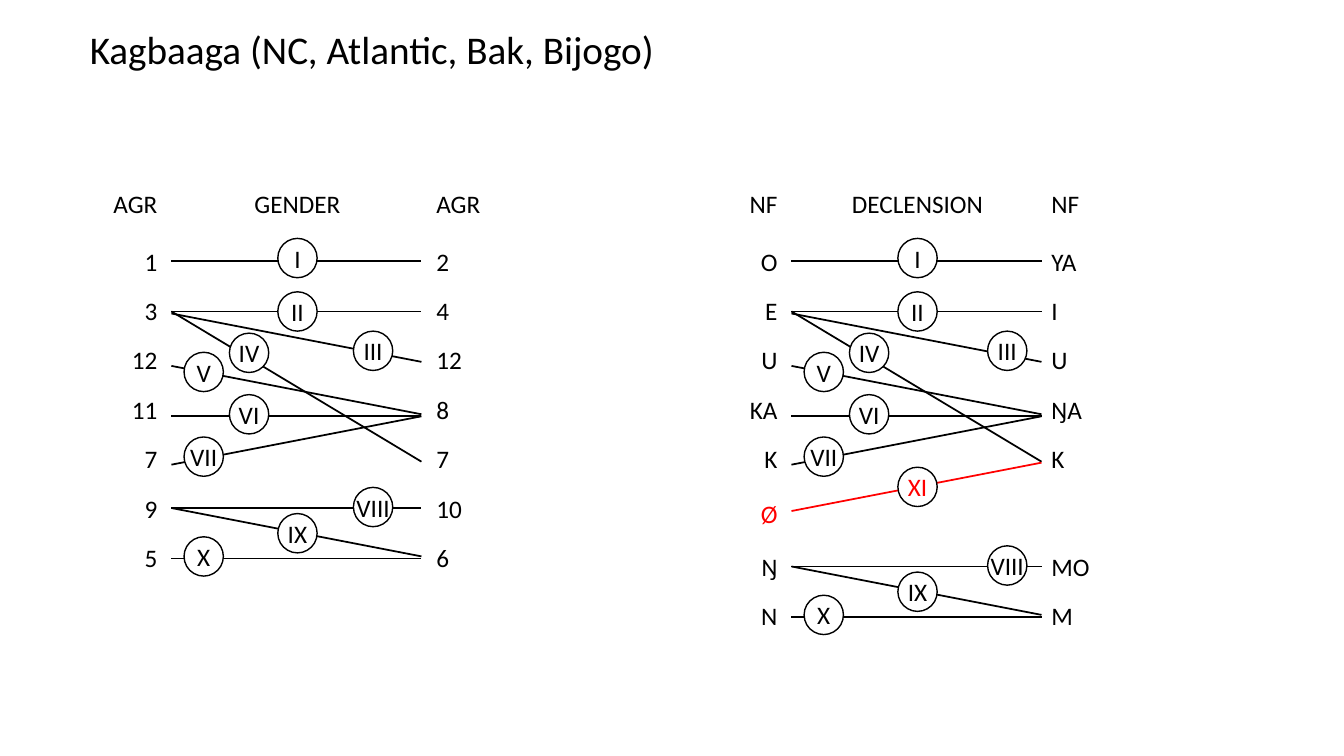
import pptx
import pptx.util
import pptx.dml.color
import pptx.enum.shapes
import pptx.enum.text
import pptx.oxml

Inches = pptx.util.Inches
ALIGN = pptx.enum.text.PP_ALIGN
BLACK, WHITE, RED = "000000", "FFFFFF", "FF0000"

LINE_LENGTH = 2.48
LABEL_HEIGHT = 0.4
LABEL_PITCH = 0.49
FIRST_LABEL = 0.57
CIRCLE_SIZE = 0.39

# Letter widths in hundredths of an inch at 18 points; digits take the default
LETTER_WIDTHS = {"A": 14.5, "C": 13.3, "D": 15.4, "E": 12.2, "F": 11.5, "G": 15.8,
                 "I": 6.3, "K": 13, "L": 10.5, "M": 21.4, "N": 16.1, "O": 16.6,
                 "R": 13.6, "S": 11.5, "U": 16, "Y": 12.2, "Ŋ": 16.1, "Ø": 16.7}
DIGIT_WIDTH = 12.7

# Heights of line ends below the top of a diagram: left end, right end
UPPER_LINES = [(0.77, 0.77), (2.79, 2.31), (1.29, 1.77), (1.27, 2.76),
               (1.27, 1.27), (2.31, 2.31), (1.81, 2.29)]
LOWER_LINES = [(3.72, 3.72), (3.22, 3.70), (3.22, 3.22)]
EXTRA_LINE = (3.25, 2.77)

# Circle centres: numeral, column, height below the top of a diagram
UPPER_CIRCLES = [("I", "middle", 0.74), ("III", "far", 1.66), ("II", "middle", 1.27),
                 ("IV", "inner", 1.68), ("V", "near", 1.87), ("VI", "inner", 2.29),
                 ("VII", "near", 2.71)]
LOWER_CIRCLES = [("VIII", "far", 3.21), ("IX", "middle", 3.47), ("X", "near", 3.70)]

GENDER = {
    "headings": ("AGR", "GENDER", "AGR"),
    "left": ["1", "3", "12", "11", "7", "9", "5"],
    "right": ["2", "4", "12", "8", "7", "10", "6"],
    "right_gap": 0.05, "far": 2.0, "lower_shift": 0, "extra": None,
}
DECLENSION = {
    "headings": ("NF", "DECLENSION", "NF"),
    "left": ["O", "E", "U", "KA", "K", "Ŋ", "N"],
    "right": ["YA", "I", "U", "ŊA", "K", "MO", "M"],
    "right_gap": 0, "far": 2.14, "lower_shift": 0.58, "extra": ("Ø", "XI"),
}


def color(value):
    return pptx.dml.color.RGBColor.from_string(value)


def write(shape, text, align, font_color=BLACK, size=18):
    frame = shape.text_frame
    frame.text = text
    paragraph = frame.paragraphs[0]
    paragraph.alignment = align
    font = paragraph.runs[0].font
    formats = {"name": "Calibri", "size": pptx.util.Pt(size), "bold": False}
    for name, value in formats.items():
        setattr(font, name, value)
    font.color.rgb = color(font_color)
    return paragraph


def add_title(slide, left, top, width, height, text):
    title = slide.shapes.title
    box = {"left": left, "top": top, "width": width, "height": height}
    for name, value in box.items():
        setattr(title, name, Inches(value))
    title.text_frame.vertical_anchor = pptx.enum.text.MSO_ANCHOR.MIDDLE
    write(title, text, ALIGN.LEFT, size=28).line_spacing = 0.9


def add_label(slide, anchor, top, text, align, font_color=BLACK):
    """Place a label whose left edge, centre or right edge is at anchor."""
    width = 0.21 + sum(LETTER_WIDTHS.get(letter, DIGIT_WIDTH) for letter in text) / 100
    share = {ALIGN.LEFT: 0, ALIGN.CENTER: 0.5, ALIGN.RIGHT: 1}[align]
    label = slide.shapes.add_textbox(Inches(anchor - share * width), Inches(top),
                                     Inches(width), Inches(LABEL_HEIGHT))
    label.text_frame.word_wrap = False
    label.text_frame.auto_size = pptx.enum.text.MSO_AUTO_SIZE.SHAPE_TO_FIT_TEXT
    write(label, text, align, font_color)


def add_line(slide, left, start, end, line_color=BLACK):
    line = slide.shapes.add_connector(
        pptx.enum.shapes.MSO_CONNECTOR.STRAIGHT, Inches(left), Inches(start),
        Inches(left + LINE_LENGTH), Inches(end))
    line.line.color.rgb = color(line_color)
    line.line.width = pptx.util.Pt(1.25)
    properties = line._element.spPr
    properties.append(properties.makeelement(pptx.oxml.ns.qn("a:effectLst"), {}))


def add_circle(slide, center_x, center_y, numeral, font_color=BLACK):
    circle = slide.shapes.add_shape(
        pptx.enum.shapes.MSO_SHAPE.OVAL, Inches(center_x - CIRCLE_SIZE / 2),
        Inches(center_y - CIRCLE_SIZE / 2), Inches(CIRCLE_SIZE), Inches(CIRCLE_SIZE))
    circle.shadow.inherit = False
    circle.fill.solid()
    circle.fill.fore_color.rgb = color(WHITE)
    circle.line.color.rgb = color(BLACK)
    circle.line.width = pptx.util.Pt(1)
    formats = {"margin_left": 0, "margin_right": 0, "margin_top": 0, "margin_bottom": 0,
               "word_wrap": False, "vertical_anchor": pptx.enum.text.MSO_ANCHOR.MIDDLE}
    for name, value in formats.items():
        setattr(circle.text_frame, name, value)
    write(circle, numeral, ALIGN.CENTER, font_color)


def add_diagram(slide, left, top, diagram):
    """Draw a diagram whose lines start at left and whose headings start at top."""
    shift = diagram["lower_shift"]
    left_edge = left - 0.04
    right_edge = left + LINE_LENGTH + diagram["right_gap"]
    columns = {"near": 0.32, "inner": 0.77, "middle": 1.25, "far": diagram["far"]}

    # Lines
    for lines, offset in ((UPPER_LINES, 0), (LOWER_LINES, shift)):
        for start, end in lines:
            add_line(slide, left, top + offset + start, top + offset + end)

    # Headings
    anchors = (left_edge, left + columns["middle"], right_edge)
    aligns = (ALIGN.RIGHT, ALIGN.CENTER, ALIGN.LEFT)
    for anchor, heading, align in zip(anchors, diagram["headings"], aligns):
        add_label(slide, anchor, top, heading, align)

    # Row labels; the last two rows belong to the lower block
    for row, (left_text, right_text) in enumerate(zip(diagram["left"], diagram["right"])):
        label_top = top + FIRST_LABEL + row * LABEL_PITCH + (shift if row >= 5 else 0)
        add_label(slide, left_edge, label_top, left_text, ALIGN.RIGHT)
        add_label(slide, right_edge, label_top, right_text, ALIGN.LEFT)

    # Extra red pairing
    if diagram["extra"]:
        label, numeral = diagram["extra"]
        start, end = EXTRA_LINE
        add_label(slide, left_edge, top + 3.07, label, ALIGN.RIGHT, RED)
        add_line(slide, left, top + start, top + end, RED)
        add_circle(slide, left + columns["middle"], top + (start + end) / 2, numeral, RED)

    # Numbered circles
    for circles, offset in ((UPPER_CIRCLES, 0), (LOWER_CIRCLES, shift)):
        for numeral, column, height in circles:
            add_circle(slide, left + columns[column], top + offset + height, numeral)


def main():
    presentation = pptx.Presentation()
    presentation.slide_width = Inches(13.33)
    presentation.slide_height = Inches(7.5)
    slide = presentation.slides.add_slide(presentation.slide_layouts[5])
    add_title(slide, 0.79, 0.2, 11.5, 0.63, "Kagbaaga (NC, Atlantic, Bak, Bijogo)")
    add_diagram(slide, 1.7, 1.82, GENDER)
    add_diagram(slide, 7.85, 1.82, DECLENSION)
    presentation.save("out.pptx")


if __name__ == "__main__":
    main()
